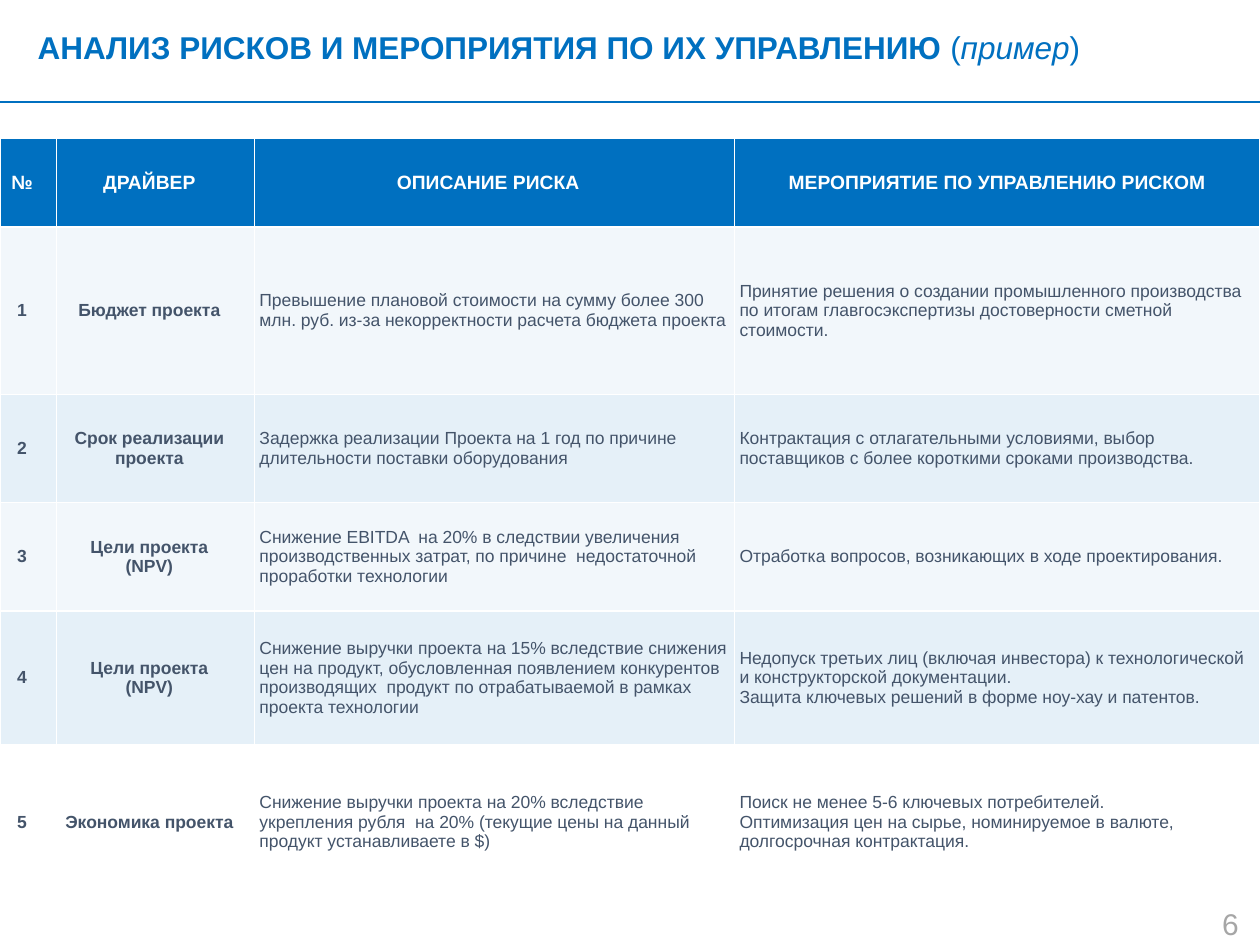
from lxml.etree import SubElement
from pptx import Presentation
from pptx.dml.color import RGBColor
from pptx.enum.shapes import MSO_CONNECTOR
from pptx.enum.text import MSO_ANCHOR, PP_ALIGN
from pptx.oxml.ns import qn
from pptx.util import Inches, Pt

BLUE = RGBColor(0x00, 0x70, 0xC0)
SLATE = RGBColor(0x44, 0x54, 0x6A)
GRAY = RGBColor(0xA6, 0xA6, 0xA6)
WHITE = RGBColor(0xFF, 0xFF, 0xFF)

COLS = [0.45, 1.57, 3.81, 4.17]
ROWS = [0.7, 1.33, 0.86, 0.86, 1.06, 1.23]
TINTS = [100, 5, 10, 5, 10, 0]
HEAD_PADS = [(0, 0, 0.1, 0)] * 3 + [(0.1, 0, 0.1, 0)]
BODY_PADS = [(0, 0, 0.1, 0), (0, 0.04, 0.1, 0.04)] + [(0.04, 0, 0.04, 0)] * 2

TITLE = [
    ("АНАЛИЗ РИСКОВ И МЕРОПРИЯТИЯ ПО ИХ УПРАВЛЕНИЮ ", {"bold": True}),
    ("(", {}),
    ("пример", {"italic": True}),
    (")", {}),
]
RISKS = [
    ("№", "ДРАЙВЕР", "ОПИСАНИЕ РИСКА", "МЕРОПРИЯТИЕ ПО УПРАВЛЕНИЮ РИСКОМ"),
    ("1", "Бюджет проекта",
     "Превышение плановой стоимости на сумму более 300 млн. руб. из-за "
     "некорректности расчета бюджета проекта",
     "Принятие решения о создании промышленного производства по итогам "
     "главгосэкспертизы достоверности сметной стоимости."),
    ("2", "Срок реализации проекта",
     "Задержка реализации Проекта на 1 год по причине длительности "
     "поставки оборудования",
     "Контрактация с отлагательными условиями, выбор поставщиков с более "
     "короткими сроками производства."),
    ("3", "Цели проекта\n(NPV)",
     "Снижение EBITDA  на 20% в следствии увеличения производственных "
     "затрат, по причине  недостаточной проработки технологии",
     "Отработка вопросов, возникающих в ходе проектирования."),
    ("4", "Цели проекта\n(NPV)",
     "Снижение выручки проекта на 15% вследствие снижения цен на продукт, "
     "обусловленная появлением конкурентов производящих  продукт по "
     "отрабатываемой в рамках проекта технологии",
     "Недопуск третьих лиц (включая инвестора) к технологической и "
     "конструкторской документации.\n"
     "Защита ключевых решений в форме ноу-хау и патентов."),
    ("5", "Экономика проекта",
     "Снижение выручки проекта на 20% вследствие укрепления рубля  на 20% "
     "(текущие цены на данный продукт устанавливаете в $)",
     "Поиск не менее 5-6 ключевых потребителей.\n"
     "Оптимизация цен на сырье, номинируемое в валюте, долгосрочная "
     "контрактация."),
]


def style(font, color, size, **form):
    """Apply the shared typeface, a colour, a size and extra font values."""
    font.color.rgb = color
    for key, value in {"name": "Arial", "size": Pt(size), **form}.items():
        setattr(font, key, value)


def add_text(slide, box, parts, color, size, **form):
    """Place one paragraph made of styled runs in a box."""
    frame = slide.shapes.add_textbox(*map(Inches, box)).text_frame
    frame.word_wrap = True
    para = frame.paragraphs[0]
    for key, value in form.items():
        setattr(para, key, value)
    for text, look in parts:
        run = para.add_run()
        run.text = text
        style(run.font, color, size, **{"bold": False, **look})


def add_header(slide, box):
    """Place the title and the full-width rule below it."""
    left, top, width, height = box
    add_text(slide, (left + 0.2, top + 0.21, 8.59, 0.37), TITLE, BLUE, 18,
             line_spacing=0.9)
    base = Inches(top + height)
    rule = slide.shapes.add_connector(
        MSO_CONNECTOR.STRAIGHT, Inches(left), base, Inches(left + width), base)
    rule.line.color.rgb = BLUE
    rule.line.width = Pt(1.5)
    SubElement(rule._element.spPr, qn("a:effectLst"))


def add_borders(cell):
    """Draw white one-point lines on all four sides of a cell."""
    props = cell._tc.get_or_add_tcPr()
    for side in ("lnL", "lnR", "lnT", "lnB"):
        line = SubElement(props, qn(f"a:{side}"), w=str(Pt(1)))
        fill = SubElement(line, qn("a:solidFill"))
        SubElement(fill, qn("a:srgbClr"), val=str(WHITE))


def tint_cell(cell, tint):
    """Fill a cell with blue at the given opacity in percent."""
    if not tint:
        cell.fill.background()
        return
    cell.fill.solid()
    cell.fill.fore_color.rgb = BLUE
    if tint < 100:
        color = cell._tc.tcPr.find(f"{qn('a:solidFill')}/{qn('a:srgbClr')}")
        SubElement(color, qn("a:alpha"), val=str(tint * 1000))


def fill_cell(cell, text, row, col):
    """Write and format one table cell by its row and column."""
    head = row == 0
    add_borders(cell)
    tint_cell(cell, TINTS[row])
    cell.text = text
    cell.vertical_anchor = MSO_ANCHOR.MIDDLE
    pads = (HEAD_PADS if head else BODY_PADS)[col]
    for side, pad in zip(("left", "top", "right", "bottom"), pads):
        setattr(cell, f"margin_{side}", Inches(pad))
    strong = head or col < 2
    for para in cell.text_frame.paragraphs:
        para.alignment = PP_ALIGN.CENTER if strong else PP_ALIGN.LEFT
        for run in para.runs:
            style(run.font, WHITE if head else SLATE, 11 if head else 10,
                  bold=strong)


def add_risks(slide, box):
    """Place the risk table in a box."""
    frame = slide.shapes.add_table(len(ROWS), len(COLS), *map(Inches, box))
    table = frame.table
    table.horz_banding = False
    for col, width in zip(table.columns, COLS):
        col.width = Inches(width)
    for row, height in zip(table.rows, ROWS):
        row.height = Inches(height)
    for row, texts in enumerate(RISKS):
        for col, text in enumerate(texts):
            fill_cell(table.cell(row, col), text, row, col)


def add_number(slide, box):
    """Place the page number in a box."""
    add_text(slide, box, [("6", {})], GRAY, 17.1, alignment=PP_ALIGN.RIGHT)


def main():
    """Build and save the slide."""
    deck = Presentation()
    deck.slide_width, deck.slide_height = Inches(10), Inches(7.5)
    slide = deck.slides.add_slide(deck.slide_layouts[6])
    add_header(slide, (0, 0, 10, 0.81))
    add_risks(slide, (0, 1.1, sum(COLS), sum(ROWS)))
    add_number(slide, (9.48, 7.14, 0.45, 0.2))
    deck.save("out.pptx")


if __name__ == "__main__":
    main()
